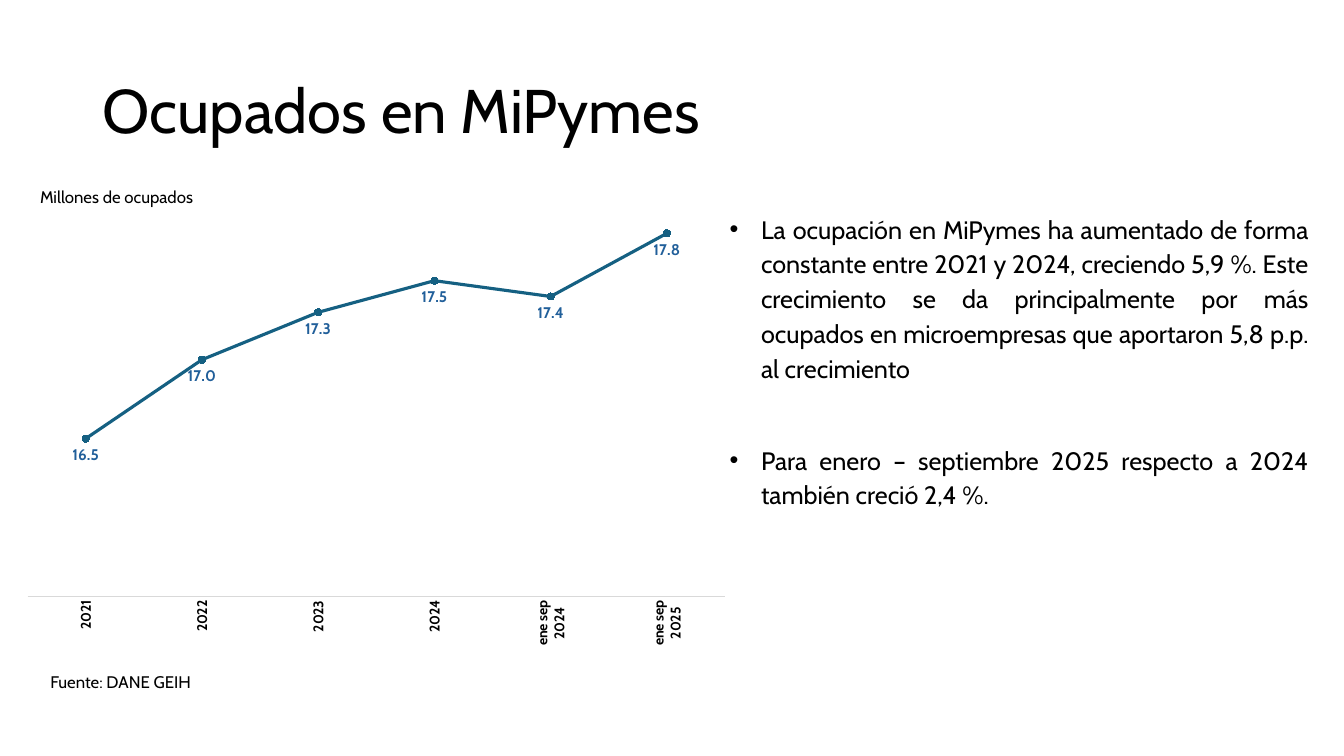
from lxml import etree
from pptx import Presentation
from pptx.chart.data import CategoryChartData
from pptx.dml.color import RGBColor
from pptx.enum.chart import XL_CHART_TYPE, XL_LABEL_POSITION, XL_MARKER_STYLE, XL_TICK_MARK
from pptx.enum.text import MSO_ANCHOR, PP_ALIGN
from pptx.oxml import parse_xml
from pptx.oxml.ns import nsdecls, qn
from pptx.util import Cm, Pt

FONT = "Cabin"
COLORS = {"text": "000000", "line": "156082", "label": "215F9A", "axis": "D9D9D9"}
WORKERS = {"2021": 16.5, "2022": 17.0, "2023": 17.3, "2024": 17.5,
           "ene sep\n2024": 17.4, "ene sep\n2025": 17.8}
CHART_BOX = (0.33, 4.85, 18.31, 11.71)
PLOT_AREA = {"x": 0.02, "y": 0.02, "w": 0.96, "h": 0.85}
TITLE = ("Ocupados en MiPymes", (2.34, 1.02, 29.21, 3.68))
FINDINGS = [
    "La ocupación en MiPymes ha aumentado de forma constante entre 2021 y 2024, creciendo 5,9 %. "
    "Este crecimiento se da principalmente por más ocupados en microempresas que aportaron "
    "5,8 p.p. al crecimiento",
    "Para enero – septiembre 2025 respecto a 2024 también creció 2,4 %.",
]
FINDINGS_BOX = (18.14, 5.15, 15.09, 9.04)
CAPTIONS = [
    ("Millones de ocupados", (0.76, 4.5, 16.94, 0.81)),
    ("Fuente: DANE GEIH", (1.02, 16.72, 16.94, 0.81)),
]


def rgb(name):
    return RGBColor.from_string(COLORS[name])


def style(font, size, color="text", bold=False):
    font.name, font.size, font.bold = FONT, Pt(size), bold
    font.color.rgb = rgb(color)


def add_text(slide, paragraphs, box, size, spacing=1.15, align=PP_ALIGN.JUSTIFY, gap=8):
    frame = slide.shapes.add_textbox(*map(Cm, box)).text_frame
    frame.word_wrap = True
    frame.text = "\n".join(paragraphs)
    for paragraph in frame.paragraphs:
        paragraph.alignment = align
        paragraph.line_spacing = spacing
        paragraph.space_after = Pt(gap)
        for run in paragraph.runs:
            style(run.font, size)
    return frame


def add_bullets(frame):
    for paragraph in frame.paragraphs:
        properties = paragraph._p.get_or_add_pPr()
        properties.set("marL", str(Cm(0.79)))
        properties.set("indent", str(-Cm(0.79)))
        etree.SubElement(properties, qn("a:buFont")).set("typeface", "Arial")
        etree.SubElement(properties, qn("a:buChar")).set("char", "•")


def add_workers_chart(slide):
    data = CategoryChartData(number_format="0.0")
    data.categories = list(WORKERS)
    data.add_series("Ocupados", list(WORKERS.values()))
    chart = slide.shapes.add_chart(XL_CHART_TYPE.LINE_MARKERS, *map(Cm, CHART_BOX), data).chart
    chart.has_legend = chart.has_title = False
    style(chart.font, 10)

    years = chart.category_axis
    years.major_tick_mark = XL_TICK_MARK.NONE
    years.format.line.color.rgb = rgb("axis")
    years.format.line.width = Pt(0.75)
    style(years.tick_labels.font, 10, bold=True)
    rotation = years._element.find(qn("c:txPr")).find(qn("a:bodyPr"))
    rotation.set("rot", "-5400000")
    rotation.set("vert", "horz")

    millions = chart.value_axis
    millions.minimum_scale, millions.maximum_scale = 15.5, 18
    millions.has_major_gridlines = False
    millions.visible = False

    plot = chart.plots[0]
    plot.vary_by_categories = False
    workers = plot.series[0]
    workers.smooth = False
    workers.format.line.color.rgb = rgb("line")
    workers.format.line.width = Pt(2.25)
    workers.marker.style = XL_MARKER_STYLE.CIRCLE
    workers.marker.size = 5
    workers.marker.format.fill.solid()
    workers.marker.format.fill.fore_color.rgb = rgb("line")
    workers.marker.format.line.color.rgb = rgb("line")
    labels = workers.data_labels
    labels.show_value = True
    labels.position = XL_LABEL_POSITION.BELOW
    labels.number_format, labels.number_format_is_linked = "0.0", False
    style(labels.font, 11, "label", True)

    edges = "".join(f'<c:{edge}Mode val="edge"/>' for edge in "xy")
    extents = "".join(f'<c:{key} val="{value}"/>' for key, value in PLOT_AREA.items())
    layout = parse_xml(f'<c:layout {nsdecls("c")}><c:manualLayout><c:layoutTarget val="inner"/>'
                       f'{edges}{extents}</c:manualLayout></c:layout>')
    plot_area = chart._chartSpace.chart.plotArea
    for previous in plot_area.findall(qn("c:layout")):
        plot_area.remove(previous)
    plot_area.insert(0, layout)


def main():
    """Build the slide on employment in MiPymes."""
    deck = Presentation()
    deck.slide_width, deck.slide_height = Cm(33.87), Cm(19.05)
    slide = deck.slides.add_slide(deck.slide_layouts[6])
    add_workers_chart(slide)
    heading, heading_box = TITLE
    title = add_text(slide, [heading], heading_box, 44, 0.9, PP_ALIGN.LEFT, 0)
    title.vertical_anchor = MSO_ANCHOR.MIDDLE
    add_bullets(add_text(slide, FINDINGS, FINDINGS_BOX, 18, gap=41))
    for caption, box in CAPTIONS:
        add_text(slide, [caption], box, 12)
    deck.save("out.pptx")


if __name__ == "__main__":
    main()
